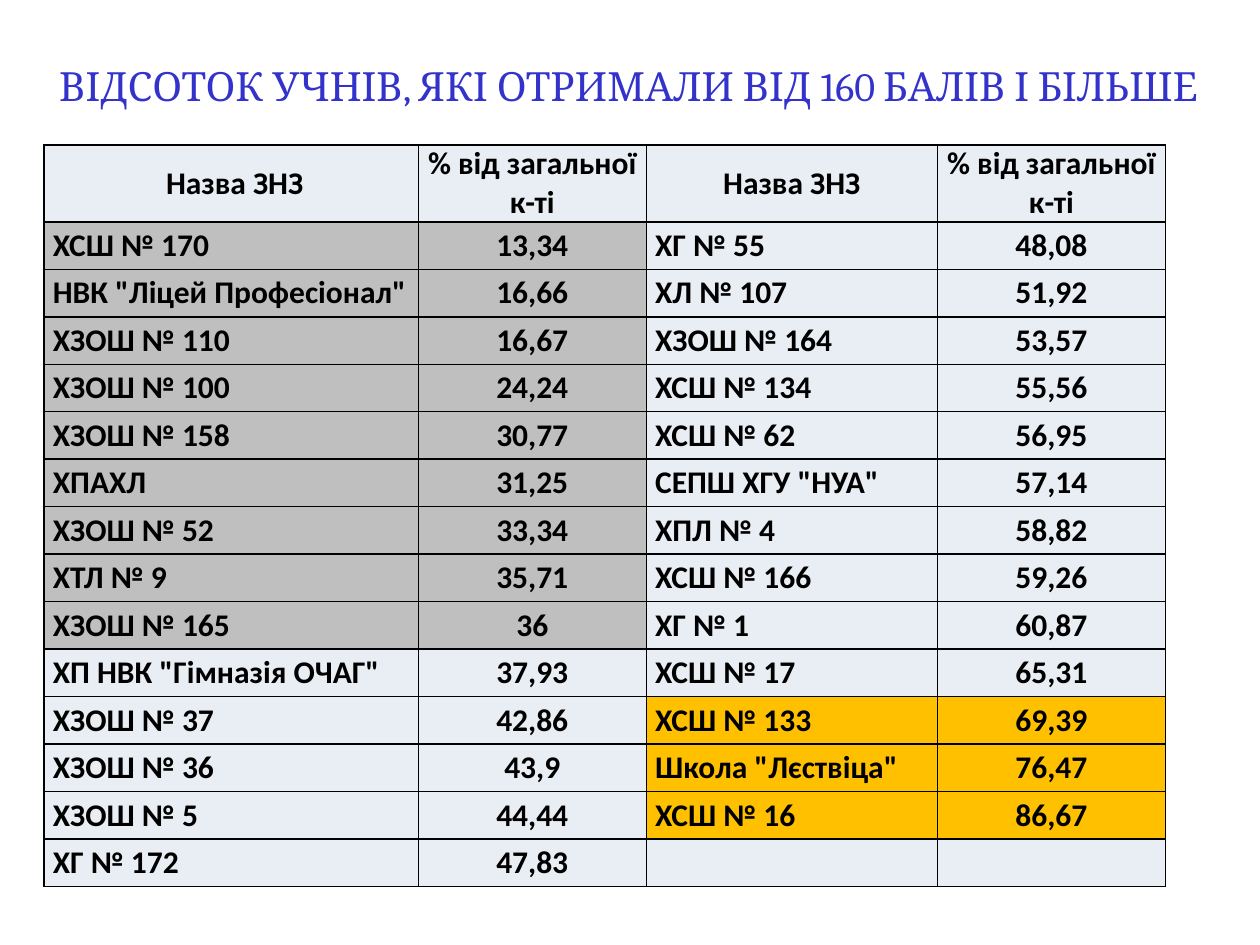
from lxml import etree
from pptx import Presentation
from pptx.dml.color import RGBColor
from pptx.enum import text
from pptx.oxml import ns
from pptx.util import Inches, Pt

TITLE = "ВІДСОТОК УЧНІВ, ЯКІ ОТРИМАЛИ ВІД 160 БАЛІВ І БІЛЬШЕ"
HEADER = (" Назва ЗНЗ", "% від загальної к-ті", "Назва ЗНЗ", "% від загальної к-ті")
LEFT_SCHOOLS = [
    ("ХСШ № 170", "13,34"),
    ('НВК "Ліцей Професіонал"', "16,66"),
    ("ХЗОШ № 110", "16,67"),
    ("ХЗОШ № 100", "24,24"),
    ("ХЗОШ № 158", "30,77"),
    ("ХПАХЛ", "31,25"),
    ("ХЗОШ № 52", "33,34"),
    ("ХТЛ № 9", "35,71"),
    ("ХЗОШ № 165", "36"),
    ('ХП НВК "Гімназія ОЧАГ"', "37,93"),
    ("ХЗОШ № 37", "42,86"),
    ("ХЗОШ № 36", "43,9"),
    ("ХЗОШ № 5", "44,44"),
    ("ХГ № 172", "47,83"),
]
RIGHT_SCHOOLS = [
    ("ХГ № 55", "48,08"),
    ("ХЛ № 107", "51,92"),
    ("ХЗОШ № 164", "53,57"),
    ("ХСШ № 134", "55,56"),
    ("ХСШ № 62", "56,95"),
    ('СЕПШ ХГУ "НУА"', "57,14"),
    ("ХПЛ № 4", "58,82"),
    ("ХСШ № 166", "59,26"),
    ("ХГ № 1", "60,87"),
    ("ХСШ № 17", "65,31"),
    ("ХСШ № 133", "69,39"),
    ('Школа "Лєствіца"', "76,47"),
    ("ХСШ № 16", "86,67"),
    ("", ""),
]
COLORS = {"title": "3333CC", "ink": "000000", "low": "BFBFBF", "mid": "E9EDF4", "high": "FFC000"}
LOW_LIMIT, HIGH_LIMIT = 36, 66
COL_WIDTHS = (2.97, 1.81, 2.31, 1.81)
LEFT, TOP, HEIGHT, HEADER_HEIGHT = 0.35, 1.15, 5.89, 0.61


def color(name):
    return RGBColor.from_string(COLORS[name])


def add_line(parent, tag, name, width):
    ln = etree.SubElement(parent, ns.qn(tag), w=str(Pt(width)))
    fill = etree.SubElement(ln, ns.qn("a:solidFill"))
    etree.SubElement(fill, ns.qn("a:srgbClr"), val=COLORS[name])
    return ln


def add_run(p, words, font, size, name, bold=False):
    r = p.add_run()
    r.text = words
    r.font.name, r.font.size, r.font.bold = font, Pt(size), bold
    r.font.color.rgb = color(name)
    return r


def band(percent):
    if not percent:
        return "mid"
    value = float(percent.replace(",", "."))
    return "low" if value <= LOW_LIMIT else "high" if value > HIGH_LIMIT else "mid"


def fill_cell(cell, words, align, fill):
    cell.margin_left = cell.margin_right = Inches(0.07)
    cell.margin_top = cell.margin_bottom = 0
    cell.vertical_anchor = text.MSO_ANCHOR.MIDDLE
    tc_pr = cell._tc.get_or_add_tcPr()
    for side in "LRTB":
        add_line(tc_pr, f"a:ln{side}", "ink", 1)
    cell.fill.solid()
    cell.fill.fore_color.rgb = color(fill)
    if words:
        p = cell.text_frame.paragraphs[0]
        p.alignment = align
        add_run(p, words, "Calibri", 18, "ink", True)


def add_results(s):
    count = len(LEFT_SCHOOLS)
    table = s.shapes.add_table(count + 1, len(COL_WIDTHS), Inches(LEFT), Inches(TOP),
                               Inches(sum(COL_WIDTHS)), Inches(HEIGHT)).table
    for column, width in zip(table.columns, COL_WIDTHS):
        column.width = Inches(width)
    for row in table.rows:
        row.height = Inches((HEIGHT - HEADER_HEIGHT) / count)
    table.rows[0].height = Inches(HEADER_HEIGHT)

    align = text.PP_ALIGN
    for col, words in enumerate(HEADER):
        fill_cell(table.cell(0, col), words, align.CENTER, "mid")
    for col, schools in ((0, LEFT_SCHOOLS), (2, RIGHT_SCHOOLS)):
        for row, (school, percent) in enumerate(schools, 1):
            fill = band(percent)
            name_align = align.JUSTIFY if "№" in school else align.LEFT
            fill_cell(table.cell(row, col), school, name_align, fill)
            fill_cell(table.cell(row, col + 1), percent, align.CENTER, fill)


def add_title(s):
    tf = s.shapes.add_textbox(Inches(LEFT), Inches(0.44), Inches(9.29), Inches(0.5)).text_frame
    tf.word_wrap = True
    tf.auto_size = text.MSO_AUTO_SIZE.SHAPE_TO_FIT_TEXT
    p = tf.paragraphs[0]
    p.alignment = text.PP_ALIGN.CENTER
    r = add_run(p, TITLE, "Cambria", 23, "title")
    r_pr = r._r.get_or_add_rPr()
    r_pr.insert(0, add_line(r_pr, "a:ln", "title", 1.45))


def main():
    prs = Presentation()
    prs.slide_width, prs.slide_height = Inches(10), Inches(7.5)
    s = prs.slides.add_slide(prs.slide_layouts[6])
    add_results(s)
    add_title(s)
    prs.save("out.pptx")


if __name__ == "__main__":
    main()
